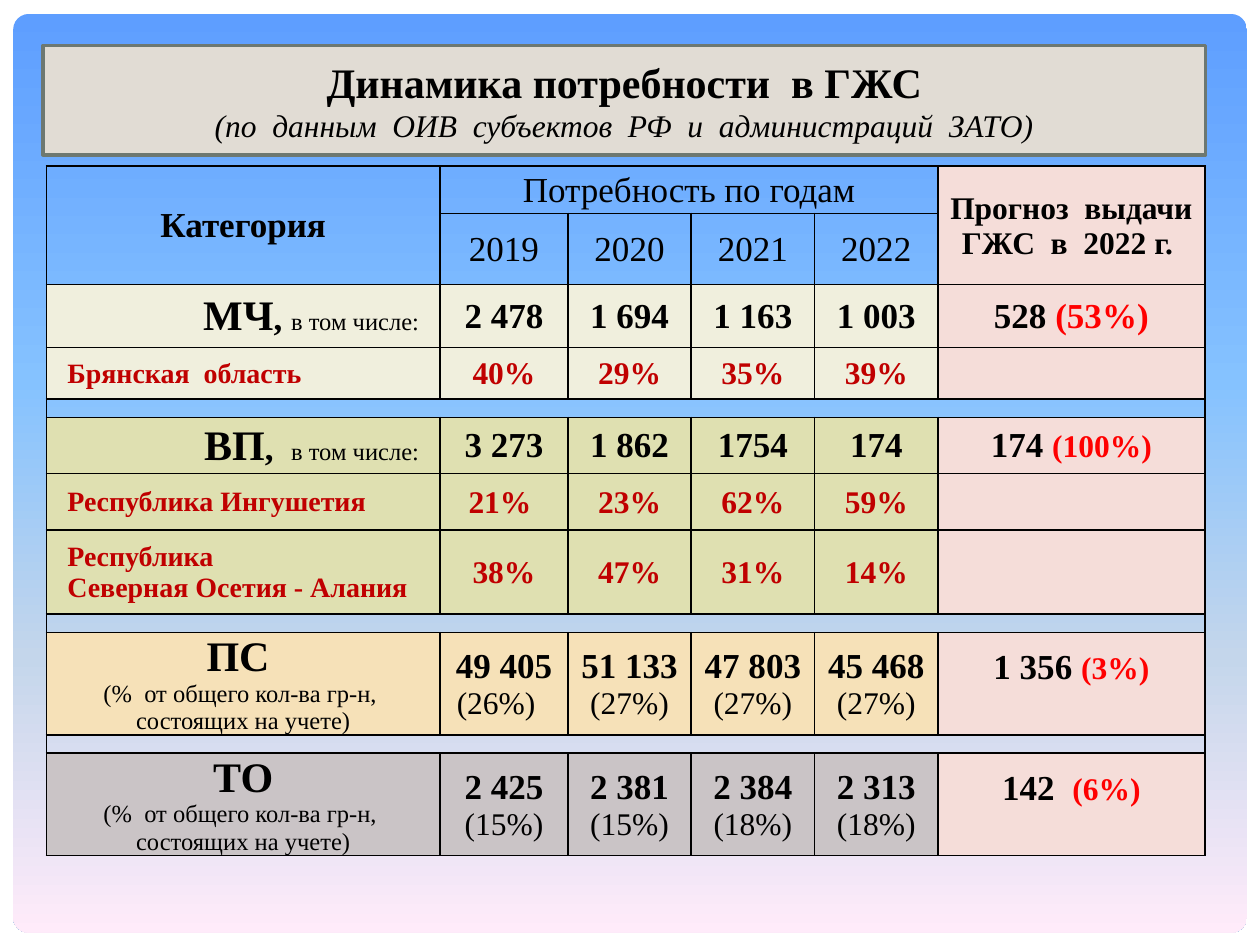
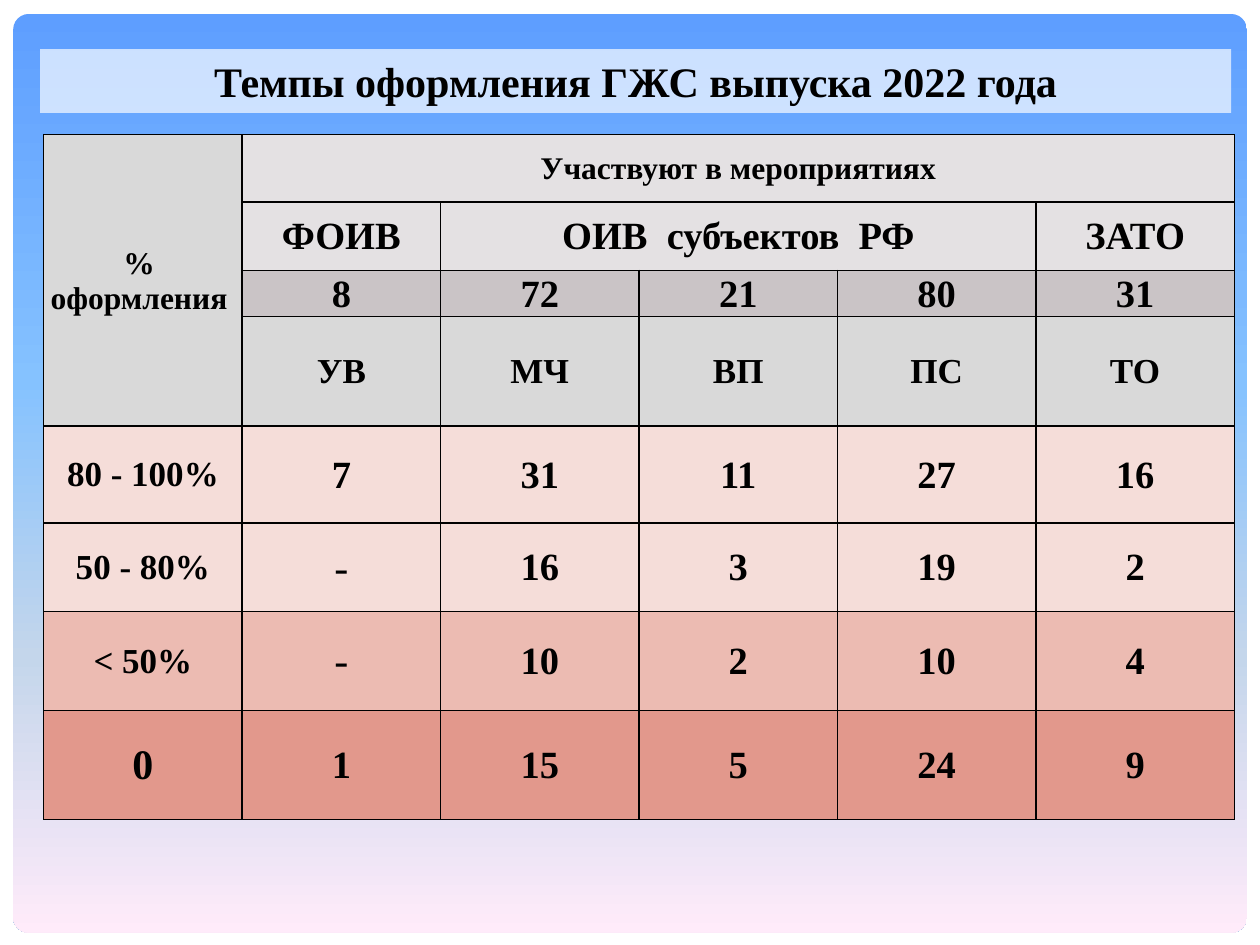
import pptx
import pptx.util
import pptx.dml.color
import pptx.enum.shapes
import pptx.enum.text
import pptx.oxml.ns
from lxml import etree

Pt = pptx.util.Pt
qn = pptx.oxml.ns.qn
ALIGN = pptx.enum.text.PP_ALIGN
MIDDLE = pptx.enum.text.MSO_ANCHOR.MIDDLE

FONT = "Times New Roman"
BLACK, WHITE, RED, DARK_RED = "000000", "FFFFFF", "FF0000", "C00000"
SKY = [(0, "5E9EFF"), (40, "85C2FF"), (70, "C4D6EB"), (100, "FFEBFA")]
PINK, ROSE, CORAL = "F5DDD9", "ECBBB2", "E2988C"
CREAM, OLIVE, SAND, MAUVE = "F0EFDD", "DFE0B1", "F6E1B8", "CAC4C6"
GREY, PALE = "D9D9D9", "E4E1E3"


# A run is (text, size, style, colour); a line is a list of runs; a cell is a list of lines.
def run(text, size, style="b", color=BLACK):
    return text, size, style, color


def single(text, size, style="b", color=BLACK):
    return [[run(text, size, style, color)]]


def category(name, tail):
    return [[run(name, 24), run(tail[0], 20), run(tail[1], 14, "")]]


def counted(name):
    return [[run(name, 24)],
            [run("(%  от общего кол-ва гр-н, ", 14, "")],
            [run("состоящих на учете)", 14, "")]]


def totals(*numbers):
    return [single(n, 20) for n in numbers]


def shares(*percents):
    return [single(n, 18, "b", DARK_RED) for n in percents]


def totals_with_shares(*pairs):
    return [[[run(n, 20)], [run(share, 18, "")]] for n, share in pairs]


def forecast(number, share, size=18):
    return [[run(number + " ", 20), run(share, size, "b", RED)]]


def region(*names):
    return [[run(name, 16, "b", DARK_RED)] for name in names]


IN_TOTAL = (", ", "в том числе:")
NEED = {
    "title": [[run("Динамика потребности  в ГЖС", 24)],
              [run("(по  данным  ОИВ  субъектов  РФ  и  администраций  ЗАТО)", 18, "i")]],
    "title_box": (24.5, 26, 664.5, 62.5),
    "table_at": (26.5, 95),
    "widths": [225, 73, 70.5, 70.5, 70.5, 152.5],
    "heights": [27, 40.5, 36, 29.5, 10.5, 32, 32.5, 48, 10.5, 58.5, 10.5, 58.5],
    "merges": [(0, 0, 1, 0), (0, 1, 0, 4), (0, 5, 1, 5), (4, 0, 4, 5), (8, 0, 8, 5), (10, 0, 10, 5)],
    "rows": [
        [single("Категория", 20), single("Потребность по годам", 20, ""), None, None, None,
         single("Прогноз  выдачи ГЖС  в  2022 г. ", 18)],
        [None] + [single(year, 20, "") for year in ("2019", "2020", "2021", "2022")] + [None],
        [category("МЧ", IN_TOTAL), *totals("2 478", "1 694", "1 163", "1 003"),
         forecast("528", "(53%)", 20)],
        [region("Брянская  область"), *shares("40%", "29%", "35%", "39%"), None],
        [None] * 6,
        [category("ВП", (",  ", "в том числе:")), *totals("3 273", "1 862", "1754", "174"),
         forecast("174", "(100%)")],
        [region("Республика Ингушетия"), *shares("21% ", "23%", "62%", "59%"), None],
        [region("Республика", "Северная Осетия - Алания"),
         *shares("38%", "47%", "31%", "14%"), None],
        [None] * 6,
        [counted("ПС "), *totals_with_shares(("49 405", "(26%)  "), ("51 133", "(27%)"),
                                             ("47 803", "(27%)"), ("45 468", "(27%)")),
         forecast("1 356", "(3%)")],
        [None] * 6,
        [counted("ТО"), *totals_with_shares(("2 425", "(15%)"), ("2 381", "(15%)"),
                                            ("2 384", "(18%)"), ("2 313", "(18%)")),
         forecast("142 ", "(6%)")],
    ],
    "row_fills": [None, None, CREAM, CREAM, None, OLIVE, OLIVE, OLIVE, None, SAND, None, MAUVE],
}
FORECAST_COLUMN = 5
SPACER_ROWS = (4, 8, 10)
CATEGORY_ROWS, REGION_ROWS, SHARE_ROWS = (2, 5), (3, 6, 7), (9, 11)


def rate_row(label, *values, label_size=20):
    return [single(label, label_size)] + [
        single(v, 24, "") if v == "-" else single(v, 22) for v in values]


PACE = {
    "title": single("Темпы оформления ГЖС выпуска 2022 года", 24),
    "title_box": (23, 28, 680.5, 36.5),
    "table_at": (25, 77),
    "widths": [113.4] * 6,
    "heights": [38.5, 39, 26.5, 62.5, 55.5, 50.5, 56.5, 62.5],
    "merges": [(0, 0, 3, 0), (0, 1, 0, 5), (1, 2, 1, 4)],
    "rows": [
        [[[run("% ", 18)], [run("оформления ", 18)]],
         single("Участвуют в мероприятиях", 18), None, None, None, None],
        [None, single("ФОИВ", 22), single("ОИВ  субъектов  РФ", 22), None, None,
         single("ЗАТО", 22)],
        [None] + [single(n, 22) for n in ("8", "72", "21", "80", "31")],
        [None] + totals("УВ", "МЧ", "ВП", "ПС", "ТО"),
        rate_row("80 - 100%", "7", "31", "11", "27", "16"),
        rate_row("50 - 80%", "-", "16", "3", "19", "2"),
        rate_row("< 50%", "-", "10", "2", "10", "4"),
        rate_row("0", "1", "15", "5", "24", "9", label_size=24),
    ],
    "row_fills": [PALE, PALE, MAUVE, GREY, PINK, PINK, ROSE, CORAL],
}


def rgb(color):
    return pptx.dml.color.RGBColor.from_string(color)


def paint(fill, color):
    if color is None:
        fill.background()
    else:
        fill.solid()
        fill.fore_color.rgb = rgb(color)


def write(tf, lines, align=ALIGN.CENTER):
    for i, line in enumerate(lines):
        p = tf.paragraphs[0] if i == 0 else tf.add_paragraph()
        p.alignment = align
        for text, size, style, color in line:
            r = p.add_run()
            r.text = text
            r.font.name = FONT
            r.font.size = Pt(size)
            r.font.bold = "b" in style
            r.font.italic = "i" in style
            r.font.color.rgb = rgb(color)


def add_borders(cell):
    tcPr = cell._tc.get_or_add_tcPr()
    for i, side in enumerate(("lnL", "lnR", "lnT", "lnB")):
        ln = etree.Element(qn("a:" + side), w=str(Pt(1)))
        fill = etree.SubElement(ln, qn("a:solidFill"))
        etree.SubElement(fill, qn("a:srgbClr"), val=BLACK)
        tcPr.insert(i, ln)


def add_panel(prs, slide):
    """Puts the white page and the rounded gradient panel on the master."""
    master = prs.slide_master
    paint(master.background.fill, WHITE)
    sp = slide.shapes.add_shape(pptx.enum.shapes.MSO_SHAPE.ROUNDED_RECTANGLE,
                                Pt(7.5), Pt(8), Pt(705), Pt(525))
    sp.adjustments[0] = 0.017
    sp.shadow.inherit = False
    sp.line.fill.background()
    sp.fill.gradient()
    sp.fill.gradient_angle = 270
    stops = sp.element.spPr.find(qn("a:gradFill")).find(qn("a:gsLst"))
    for stop in list(stops):
        stops.remove(stop)
    for percent, color in SKY:
        stop = etree.SubElement(stops, qn("a:gs"), pos=str(percent * 1000))
        etree.SubElement(stop, qn("a:srgbClr"), val=color)
    sp.element.nvSpPr.cNvPr.set("id", "100")
    master.shapes.element.insert(2, sp.element)


def add_title(slide, content):
    sp = slide.shapes.title
    sp.left, sp.top, sp.width, sp.height = map(Pt, content["title_box"])
    tf = sp.text_frame
    tf.word_wrap = True
    tf.auto_size = pptx.enum.text.MSO_AUTO_SIZE.NONE
    tf.vertical_anchor = MIDDLE
    write(tf, content["title"])
    return sp


def add_grid(slide, content):
    rows, widths, heights = content["rows"], content["widths"], content["heights"]
    left, top = content["table_at"]
    table = slide.shapes.add_table(len(rows), len(widths), Pt(left), Pt(top),
                                   Pt(sum(widths)), Pt(sum(heights))).table
    table.first_row = table.horz_banding = False
    for column, width in zip(table.columns, widths):
        column.width = Pt(width)
    for row, height in zip(table.rows, heights):
        row.height = Pt(height)
    for r, row in enumerate(rows):
        for c, lines in enumerate(row):
            cell = table.cell(r, c)
            cell.vertical_anchor = MIDDLE
            cell.margin_left = cell.margin_right = cell.margin_top = Pt(0.7)
            cell.margin_bottom = 0
            paint(cell.fill, content["row_fills"][r])
            add_borders(cell)
            if lines:
                write(cell.text_frame, lines)
            else:
                p = cell.text_frame.paragraphs[0]
                etree.SubElement(p._p, qn("a:endParaRPr"), sz="600")
    for r1, c1, r2, c2 in content["merges"]:
        table.cell(r1, c1).merge(table.cell(r2, c2))
    return table


def align_column(cell, align):
    for p in cell.text_frame.paragraphs:
        p.alignment = align


def build_need(slide):
    sp = add_title(slide, NEED)
    paint(sp.fill, "E1DCD4")
    sp.line.color.rgb = rgb("6D7871")
    sp.line.width = Pt(2)
    table = add_grid(slide, NEED)
    for r in range(len(NEED["rows"])):
        if r not in SPACER_ROWS:
            paint(table.cell(r, FORECAST_COLUMN).fill, PINK)
    for r in CATEGORY_ROWS:
        table.cell(r, 0).margin_right = Pt(12)
        align_column(table.cell(r, 0), ALIGN.RIGHT)
    for r in REGION_ROWS:
        table.cell(r, 0).margin_left = Pt(12)
        align_column(table.cell(r, 0), ALIGN.LEFT)
    for r in SHARE_ROWS:
        table.cell(r, FORECAST_COLUMN).margin_bottom = Pt(19)


def build_pace(slide):
    sp = add_title(slide, PACE)
    paint(sp.fill, WHITE)
    color = sp.element.spPr.find(qn("a:solidFill"))[0]
    etree.SubElement(color, qn("a:alpha"), val="68000")
    table = add_grid(slide, PACE)
    paint(table.cell(0, 0).fill, GREY)


def main():
    prs = pptx.Presentation()
    prs.slide_width, prs.slide_height = Pt(720), Pt(540)
    layout = prs.slide_layouts.get_by_name("Title Only")
    need, pace = (prs.slides.add_slide(layout) for _ in range(2))
    add_panel(prs, need)
    build_need(need)
    build_pace(pace)
    prs.save("out.pptx")


if __name__ == "__main__":
    main()
